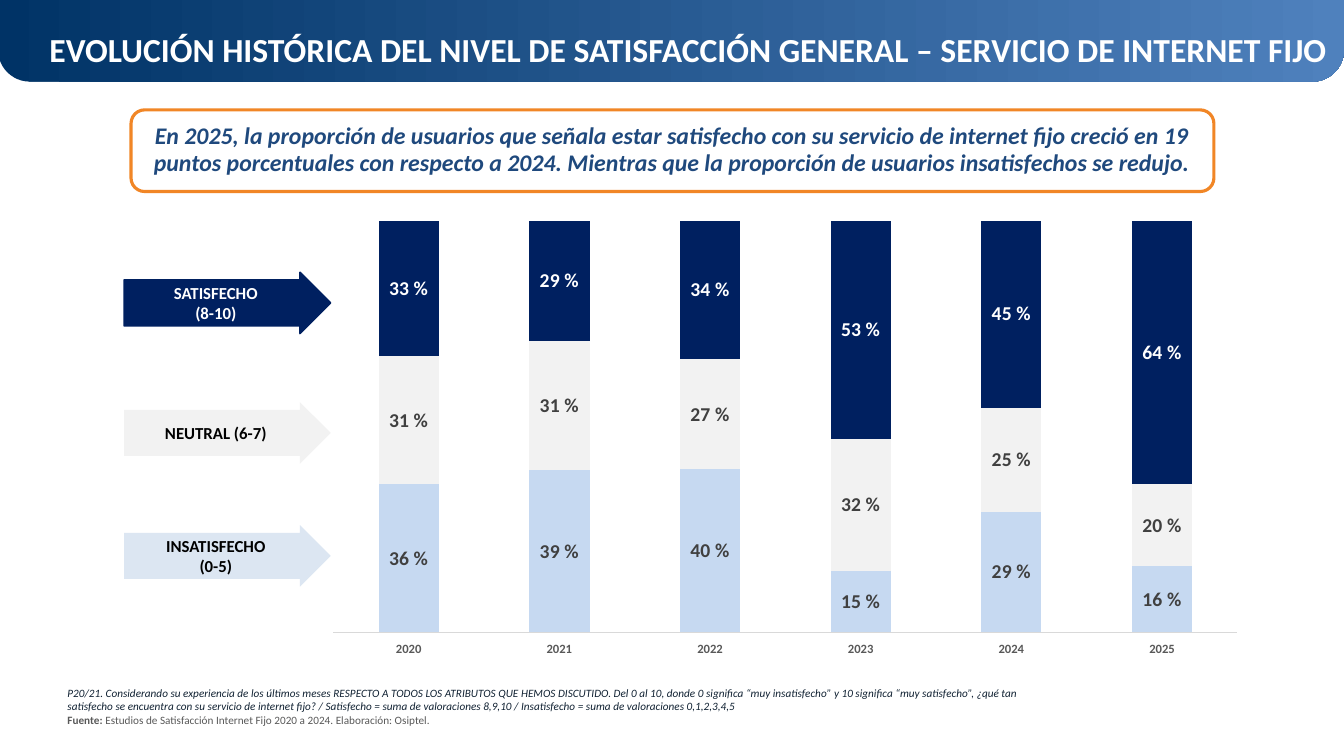
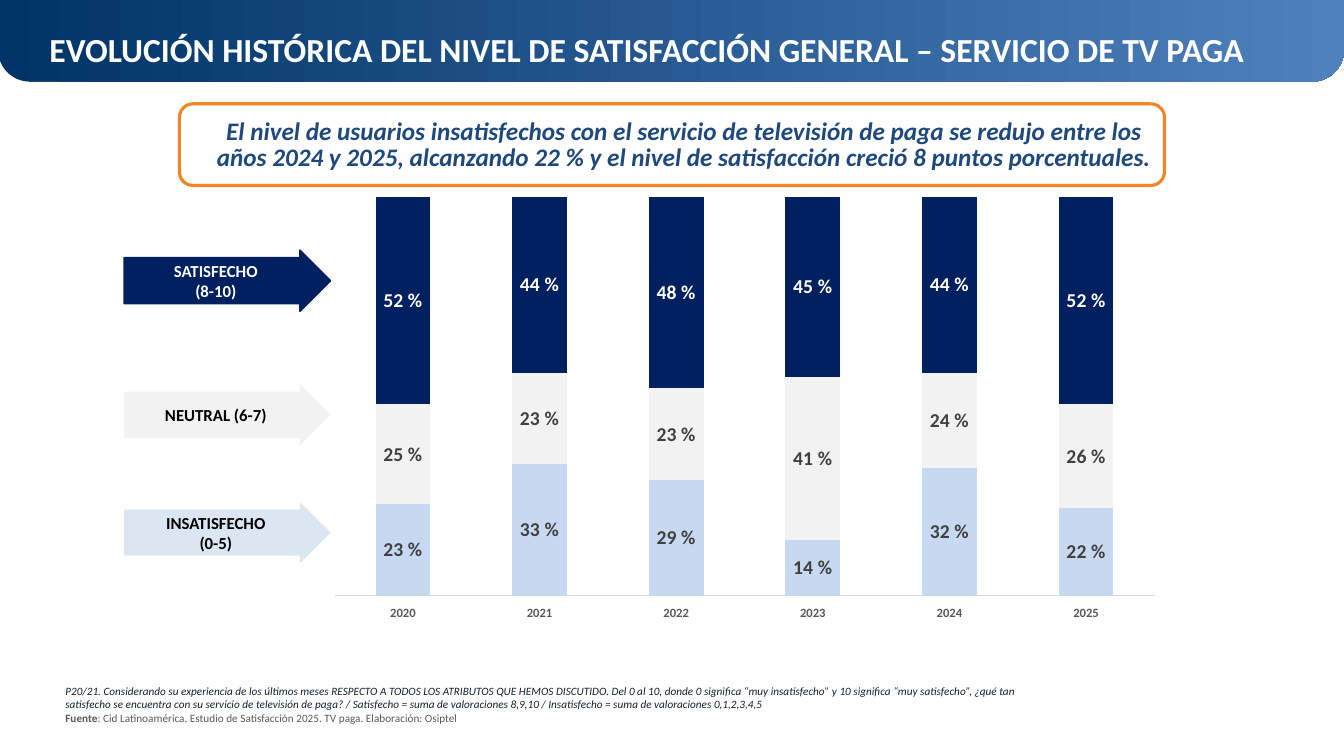
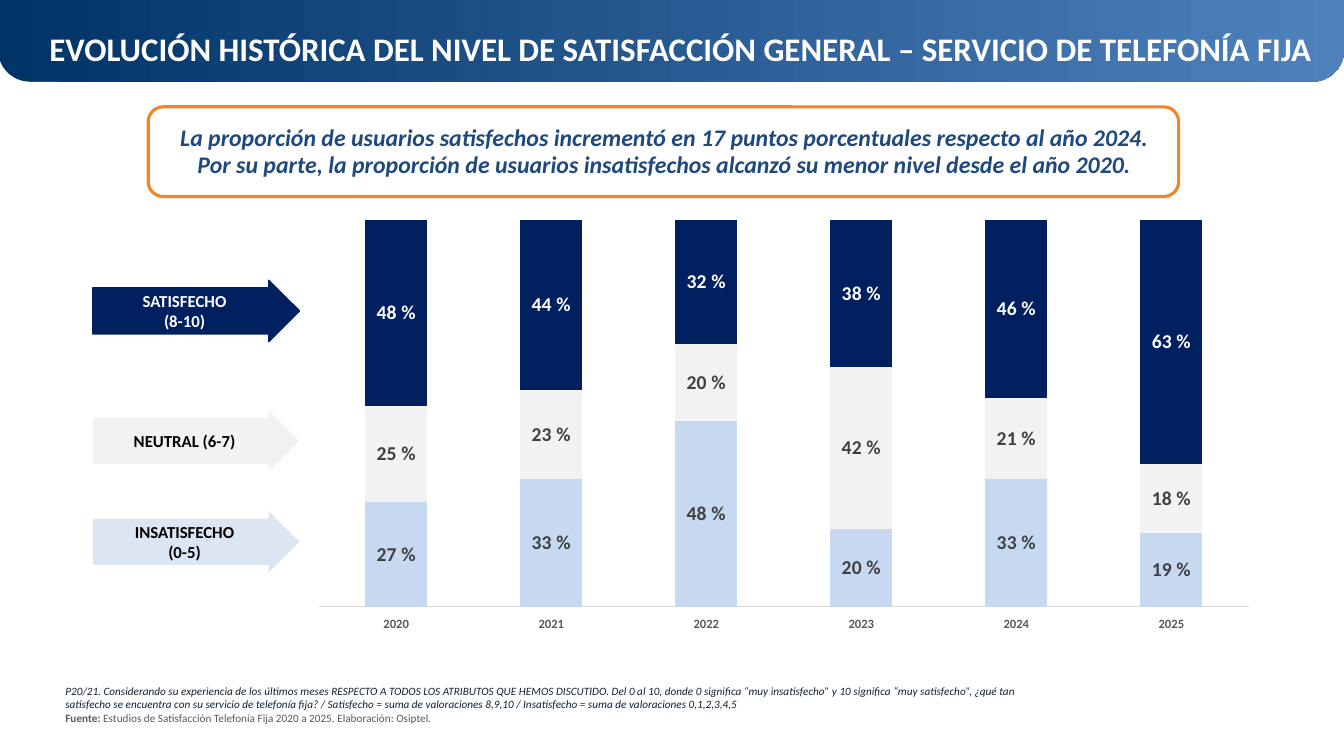
from lxml import etree
from pptx import Presentation
from pptx.chart.data import CategoryChartData
from pptx.dml.color import RGBColor
from pptx.enum.chart import XL_CHART_TYPE, XL_LABEL_POSITION, XL_TICK_LABEL_POSITION, XL_TICK_MARK
from pptx.enum.shapes import MSO_SHAPE
from pptx.enum.text import MSO_ANCHOR, MSO_AUTO_SIZE, PP_ALIGN
from pptx.util import Inches, Pt

STACKED = XL_CHART_TYPE.COLUMN_STACKED_100
LABEL_CENTER = XL_LABEL_POSITION.CENTER
AXIS_LOW = XL_TICK_LABEL_POSITION.LOW
NO_TICK = XL_TICK_MARK.NONE
BAND = MSO_SHAPE.ROUND_2_SAME_RECTANGLE
FRAME = MSO_SHAPE.ROUNDED_RECTANGLE
ARROW = MSO_SHAPE.RIGHT_ARROW
TOP, MIDDLE = MSO_ANCHOR.TOP, MSO_ANCHOR.MIDDLE
LEFT, CENTER = PP_ALIGN.LEFT, PP_ALIGN.CENTER
NO_AUTOSIZE = MSO_AUTO_SIZE.NONE

FONT = "Calibri"
WHITE = RGBColor(0xFF, 0xFF, 0xFF)
BLACK = RGBColor(0x00, 0x00, 0x00)
BAND_DARK = RGBColor(0x00, 0x33, 0x66)
BAND_LIGHT = RGBColor(0x4F, 0x81, 0xBD)
ORANGE = RGBColor(0xF1, 0x86, 0x26)
MESSAGE_BLUE = RGBColor(0x1F, 0x49, 0x7D)
NAVY = RGBColor(0x00, 0x20, 0x60)
PALE_GRAY = RGBColor(0xF2, 0xF2, 0xF2)
PALE_BLUE = RGBColor(0xDC, 0xE6, 0xF2)
BAR_BLUE = RGBColor(0xC6, 0xD9, 0xF1)
LABEL_GRAY = RGBColor(0x40, 0x40, 0x40)
AXIS_GRAY = RGBColor(0x59, 0x59, 0x59)
AXIS_LINE = RGBColor(0xD9, 0xD9, 0xD9)
NOTE_INK = RGBColor(0x10, 0x21, 0x32)

YEARS = ["2020", "2021", "2022", "2023", "2024", "2025"]
SERIES_STYLES = [
    ("Insatisfecho", BAR_BLUE, LABEL_GRAY),
    ("Neutral", PALE_GRAY, LABEL_GRAY),
    ("Satisfecho", NAVY, WHITE),
]
ARROWS = [
    (["SATISFECHO", "(8-10)"], NAVY, WHITE),
    (["NEUTRAL (6-7)"], PALE_GRAY, BLACK),
    (["INSATISFECHO", "(0-5)"], PALE_BLUE, BLACK),
]
ARROW_SIZE = (2.05, 0.61)
PLOT_LAYOUT = {"x": 0.02, "y": 0.02, "w": 0.96, "h": 0.92}
TITLE = "EVOLUCIÓN HISTÓRICA DEL NIVEL DE SATISFACCIÓN GENERAL – SERVICIO DE {}"
QUESTION = (
    "P20/21. Considerando su experiencia de los últimos meses RESPECTO A TODOS LOS "
    "ATRIBUTOS QUE HEMOS DISCUTIDO. Del 0 al 10, donde 0 significa “muy insatisfecho” "
    "y 10 significa “muy satisfecho”, ¿qué tan satisfecho se encuentra con su servicio "
    "de {}? / Satisfecho = suma de valoraciones 8,9,10 / Insatisfecho = suma de "
    "valoraciones 0,1,2,3,4,5"
)

SLIDES = [
    {
        "title": "INTERNET FIJO", "title_size": 24, "service": "internet fijo",
        "message": "En 2025, la proporción de usuarios que señala estar satisfecho con su "
                   "servicio de internet fijo creció en 19 puntos porcentuales con respecto "
                   "a 2024. Mientras que la proporción de usuarios insatisfechos se redujo.",
        "message_size": 17,
        "frame": (1.3, 1.09, 10.74, 0.81), "message_box": (1.39, 1.17, 10.55, 0.63),
        "source": ("Fuente: ", "Estudios de Satisfacción Internet Fijo 2020 a 2024. "
                               "Elaboración: Osiptel."),
        "note_box": (0.57, 6.76, 9.68, 0.51),
        "arrow_left": 1.23, "arrow_tops": [2.7, 3.99, 5.21],
        "chart_box": (3.12, 2.1, 9.34, 4.44),
        "values": [
            [0.36, 0.39, 0.4, 0.15, 0.29, 0.16],
            [0.31, 0.31, 0.27, 0.32, 0.25, 0.2],
            [0.33, 0.29, 0.34, 0.53, 0.45, 0.64],
        ],
    },
    {
        "title": "TV PAGA", "title_size": 24, "service": "televisión de paga",
        "message": "El nivel de usuarios insatisfechos con el servicio de televisión de paga "
                   "se redujo entre los años 2024 y 2025, alcanzando 22 % y el nivel de "
                   "satisfacción creció 8 puntos porcentuales.",
        "message_size": 18,
        "frame": (1.78, 1.03, 9.77, 0.81), "message_box": (1.91, 1.13, 9.75, 0.63),
        "source": ("Fuente", ": Cid Latinoamérica, Estudio de Satisfacción 2025. TV paga. "
                             "Elaboración: Osiptel"),
        "note_box": (0.55, 6.74, 9.76, 0.51),
        "arrow_left": 1.23, "arrow_tops": [2.48, 3.81, 4.98],
        "chart_box": (3.15, 1.87, 8.47, 4.3),
        "values": [
            [0.23, 0.33, 0.29, 0.14, 0.32, 0.22],
            [0.25, 0.23, 0.23, 0.41, 0.24, 0.26],
            [0.52, 0.44, 0.48, 0.45, 0.44, 0.52],
        ],
    },
    {
        "title": "TELEFONÍA FIJA", "title_size": 23.5, "service": "telefonía fija",
        "message": "La proporción de usuarios satisfechos incrementó en 17 puntos "
                   "porcentuales respecto al año 2024. Por su parte, la proporción de "
                   "usuarios insatisfechos alcanzó su menor nivel desde el año 2020.",
        "message_size": 17,
        "frame": (1.47, 1.06, 10.22, 0.89), "message_box": (1.55, 1.19, 10.08, 0.63),
        "source": ("Fuente: ", "Estudios de Satisfacción Telefonía Fija 2020 a 2025. "
                               "Elaboración: Osiptel."),
        "note_box": (0.55, 6.74, 9.76, 0.51),
        "arrow_left": 0.92, "arrow_tops": [2.78, 4.07, 5.07],
        "chart_box": (2.97, 2.1, 9.61, 4.17),
        "values": [
            [0.27, 0.33, 0.48, 0.2, 0.33, 0.19],
            [0.25, 0.23, 0.2, 0.42, 0.21, 0.18],
            [0.48, 0.44, 0.32, 0.38, 0.46, 0.63],
        ],
    },
]


def inches(box):
    return [Inches(length) for length in box]


def set_font(font, size, color, bold=False, italic=False):
    font.name = FONT
    font.size = Pt(size)
    font.color.rgb = color
    font.bold = bold
    font.italic = italic


def write(frame, paragraphs, align=LEFT, anchor=TOP, spacing=None, **style):
    frame.word_wrap = True
    frame.auto_size = NO_AUTOSIZE
    frame.vertical_anchor = anchor
    for index, runs in enumerate(paragraphs):
        paragraph = frame.add_paragraph() if index else frame.paragraphs[0]
        paragraph.alignment = align
        paragraph.line_spacing = spacing
        for text, changes in [(runs, {})] if isinstance(runs, str) else runs:
            run = paragraph.add_run()
            run.text = text
            set_font(run.font, **{**style, **changes})


def add_shape(slide, preset, box, fill=None, line=None, line_width=1):
    shape = slide.shapes.add_shape(preset, *inches(box))
    shape.shadow.inherit = False
    if fill is None:
        shape.fill.background()
    else:
        shape.fill.solid()
        shape.fill.fore_color.rgb = fill
    if line is None:
        shape.line.fill.background()
    else:
        shape.line.color.rgb = line
        shape.line.width = Pt(line_width)
    return shape


def prepare_layout(layout, slide):
    band = add_shape(slide, BAND, (-0.02, 0, 13.35, 0.81))
    band.rotation = 180
    band.adjustments[0] = 0.39
    band.adjustments[1] = 0
    band.fill.gradient()
    band.fill.gradient_angle = 180
    for stop, color in zip(band.fill.gradient_stops, (BAND_DARK, BAND_LIGHT)):
        stop.color.rgb = color
    band.element.xpath("./p:nvSpPr/p:cNvPr")[0].set("id", "20")
    layout.shapes.element.insert(2, band.element)
    title = layout.placeholders[0]
    title.left, title.top, title.width, title.height = inches((0.39, 0.28, 13.07, 0.45))


def set_plot_layout(chart):
    plot_area = chart.element.xpath(".//c:plotArea")[0]
    for old_layout in plot_area.xpath("./c:layout"):
        plot_area.remove(old_layout)
    namespace = "{%s}" % plot_area.nsmap["c"]
    layout = etree.Element(namespace + "layout")
    manual = etree.SubElement(layout, namespace + "manualLayout")
    settings = {"layoutTarget": "inner", "xMode": "edge", "yMode": "edge", **PLOT_LAYOUT}
    for name, value in settings.items():
        etree.SubElement(manual, namespace + name).set("val", str(value))
    plot_area.insert(0, layout)


def add_satisfaction_chart(slide, box, values):
    data = CategoryChartData(number_format="0%")
    data.categories = YEARS
    for (name, _, _), shares in zip(SERIES_STYLES, values):
        data.add_series(name, shares)
    chart = slide.shapes.add_chart(STACKED, *inches(box), data).chart
    set_font(chart.font, 10, BLACK)
    chart.has_legend = False
    chart.has_title = False
    chart.value_axis.visible = False
    chart.value_axis.has_major_gridlines = False
    axis = chart.category_axis
    axis.major_tick_mark = axis.minor_tick_mark = NO_TICK
    axis.tick_label_position = AXIS_LOW
    axis.format.line.color.rgb = AXIS_LINE
    axis.format.line.width = Pt(0.75)
    set_font(axis.tick_labels.font, 9, AXIS_GRAY, bold=True)
    plot = chart.plots[0]
    plot.vary_by_categories = False
    plot.gap_width = 150
    plot.overlap = 100
    for series, (_, color, label_color) in zip(plot.series, SERIES_STYLES):
        series.format.fill.solid()
        series.format.fill.fore_color.rgb = color
        labels = series.data_labels
        labels.show_value = True
        labels.number_format = "###0\\ %"
        labels.number_format_is_linked = False
        labels.position = LABEL_CENTER
        set_font(labels.font, 14, label_color, bold=True)
    set_plot_layout(chart)


def fill_slide(slide, content):
    write(slide.shapes.title.text_frame, [TITLE.format(content["title"])],
          spacing=0.9, size=content["title_size"], color=WHITE, bold=True)

    add_shape(slide, FRAME, content["frame"], line=ORANGE, line_width=2.25)
    message = slide.shapes.add_textbox(*inches(content["message_box"]))
    write(message.text_frame, [content["message"]], align=CENTER, spacing=Pt(19),
          size=content["message_size"], color=MESSAGE_BLUE, bold=True, italic=True)

    label, reference = content["source"]
    plain = {"color": AXIS_GRAY, "italic": False}
    note = slide.shapes.add_textbox(*inches(content["note_box"]))
    write(note.text_frame,
          [QUESTION.format(content["service"]),
           [(label, {**plain, "bold": True}), (reference, plain)]],
          size=8, color=NOTE_INK, italic=True)

    for (lines, fill, color), top in zip(ARROWS, content["arrow_tops"]):
        arrow = add_shape(slide, ARROW, (content["arrow_left"], top, *ARROW_SIZE),
                          fill=fill, line=NAVY if fill == NAVY else None)
        arrow.adjustments[0] = 0.75
        arrow.adjustments[1] = 0.5
        write(arrow.text_frame, lines, align=CENTER, anchor=MIDDLE,
              size=12, color=color, bold=True)

    add_satisfaction_chart(slide, content["chart_box"], content["values"])


def main():
    presentation = Presentation()
    presentation.slide_width = Inches(13.33)
    presentation.slide_height = Inches(7.5)
    layout = presentation.slide_layouts.get_by_name("Title Only")
    slides = [presentation.slides.add_slide(layout) for _ in SLIDES]
    prepare_layout(layout, slides[0])
    for slide, content in zip(slides, SLIDES):
        fill_slide(slide, content)
    presentation.save("out.pptx")


if __name__ == "__main__":
    main()
